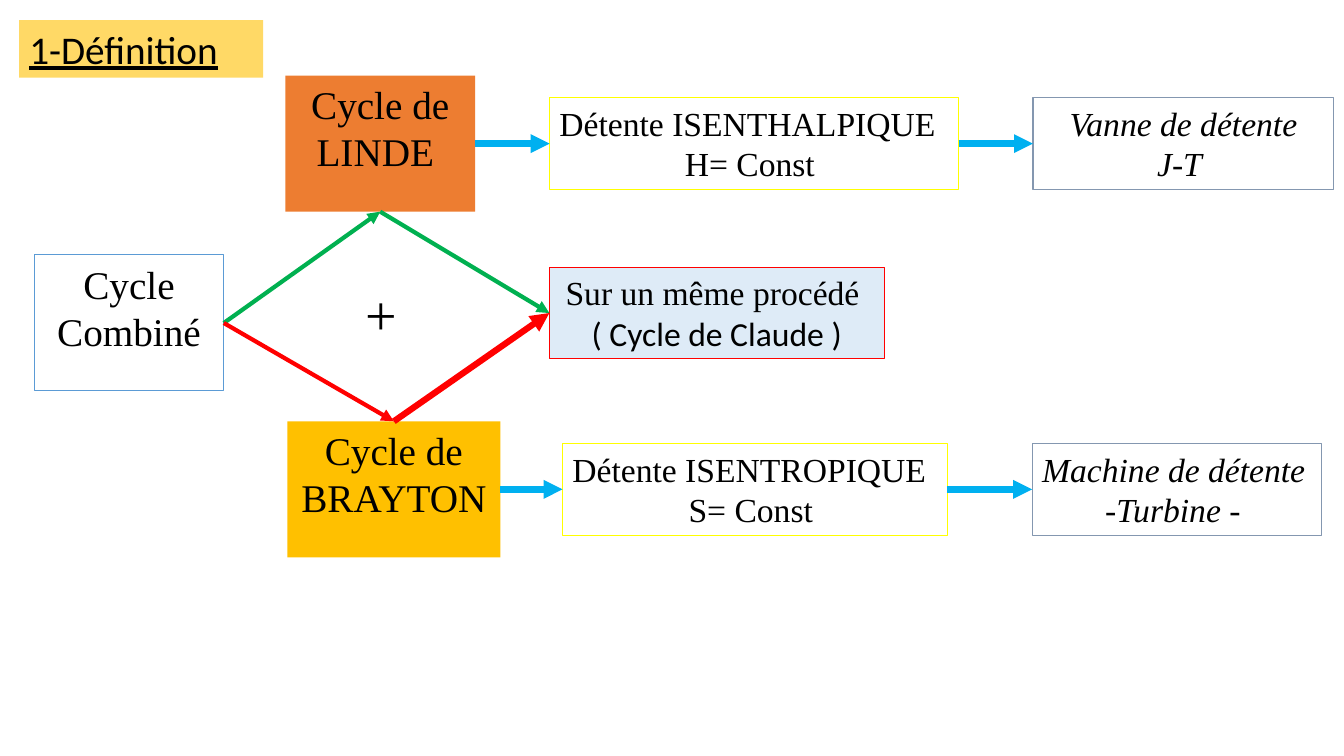
import dataclasses

import pptx
import pptx.dml.color
import pptx.enum.shapes
import pptx.enum.text
import pptx.oxml
import pptx.oxml.ns
import pptx.util

ALIGN = pptx.enum.text.PP_ALIGN
ANCHOR = pptx.enum.text.MSO_ANCHOR
TOP, LEFT, BOTTOM, RIGHT = range(4)


@dataclasses.dataclass(frozen=True)
class Theme:
    """Colours, fonts and type sizes of the slide."""
    ink: str = "000000"
    head: str = "FFD966"
    linde: str = "ED7D31"
    brayton: str = "FFC000"
    claude: str = "DEEBF7"
    blue: str = "5B9BD5"
    yellow: str = "FFFF00"
    slate: str = "8497B0"
    red: str = "FF0000"
    green: str = "00B050"
    sky: str = "00B0F0"
    serif: str = "Times New Roman"
    sans: str = "Calibri"
    body: int = 24
    large: int = 28
    sign: int = 40
    edge: float = 0.75
    thin: float = 3
    thick: float = 4.5


@dataclasses.dataclass(frozen=True)
class Box:
    """A rectangle in inches."""
    x: float
    y: float
    w: float
    h: float

    def cut(self, x, y, w, h):
        """Return a box inside this one, given in percent of its size."""
        return Box(self.x + self.w * x / 100, self.y + self.h * y / 100,
                   self.w * w / 100, self.h * h / 100)

    def emu(self):
        """Return left, top, width and height as lengths."""
        return [pptx.util.Inches(n) for n in (self.x, self.y, self.w, self.h)]


THEME = Theme()
PAGE = Box(0, 0, 13.33, 7.5)


def rgb(code):
    """Turn a hex code into a colour."""
    return pptx.dml.color.RGBColor.from_string(code)


def write(shape, text, size=THEME.body, font=THEME.serif, align=ALIGN.CENTER,
          italic=False, underline=False):
    """Add one formatted paragraph to a shape."""
    frame = shape.text_frame
    frame.word_wrap = True
    frame.auto_size = pptx.enum.text.MSO_AUTO_SIZE.NONE
    frame.vertical_anchor = ANCHOR.TOP
    para = frame.add_paragraph() if frame.text else frame.paragraphs[0]
    para.alignment = align
    para.line_spacing = 1.0
    run = para.add_run()
    run.text = text
    run.font.size = pptx.util.Pt(size)
    run.font.name = font
    run.font.italic = italic
    run.font.underline = underline
    run.font.color.rgb = rgb(THEME.ink)


def panel(slide, box, fill=None, line=None):
    """Draw a rectangle with an optional fill and outline."""
    kind = pptx.enum.shapes.MSO_SHAPE.RECTANGLE
    shape = slide.shapes.add_shape(kind, *box.emu())
    shape.shadow.inherit = False
    if fill:
        shape.fill.solid()
        shape.fill.fore_color.rgb = rgb(fill)
    else:
        shape.fill.background()
    if line:
        shape.line.color.rgb = rgb(line)
        shape.line.width = pptx.util.Pt(THEME.edge)
    else:
        shape.line.fill.background()
    return shape


def arrow(slide, start, out, end, into, color, width):
    """Join the sides of two shapes with an arrow."""
    kind = pptx.enum.shapes.MSO_CONNECTOR.STRAIGHT
    link = slide.shapes.add_connector(kind, 0, 0, 0, 0)
    link.begin_connect(start, out)
    link.end_connect(end, into)
    link.line.color.rgb = rgb(color)
    link.line.width = pptx.util.Pt(width)
    props = link.element.spPr
    space = pptx.oxml.ns.nsdecls("a")
    tip = pptx.oxml.parse_xml(f'<a:tailEnd {space} type="triangle"/>')
    props.find(pptx.oxml.ns.qn("a:ln")).append(tip)
    props.append(pptx.oxml.parse_xml(f'<a:effectLst {space}/>'))


def heading(slide, box):
    """Place the title on its coloured band."""
    title = slide.shapes.title
    title.left, title.top, title.width, title.height = box.emu()
    title.fill.solid()
    title.fill.fore_color.rgb = rgb(THEME.head)
    write(title, "1-Définition", size=THEME.large, font=THEME.sans,
          align=ALIGN.LEFT, underline=True)


def chain(slide, box, spans, fill, cycle, stage, tool, side):
    """Place a cycle, its expansion and its device in a row, and return the cycle."""
    first, gap, mid, space, last = spans
    root = panel(slide, box.cut(0, 0, first, 100), fill=fill)
    write(root, cycle, size=THEME.large)
    left = first + gap
    step = panel(slide, box.cut(left, 16.3, mid, 67.4), line=THEME.yellow)
    write(step, stage[0], align=ALIGN.LEFT)
    write(step, stage[1])
    left += mid + space
    device = panel(slide, box.cut(left, 16.3, last, 67.4), line=THEME.slate)
    write(device, tool[0], align=side, italic=True)
    write(device, tool[1], italic=True)
    for start, end in ((root, step), (step, device)):
        arrow(slide, start, RIGHT, end, LEFT, THEME.sky, THEME.thick)
    return root


def centre(slide, box, linde, brayton):
    """Place the combined cycle, the plus sign and the result, joined to both cycles."""
    source = panel(slide, box.cut(0, 0, 22.3, 81.8), line=THEME.blue)
    write(source, "Cycle Combiné", size=THEME.large)
    plus = slide.shapes.add_textbox(*box.cut(26.9, 11.5, 27.8, 87.9).emu())
    write(plus, "+", size=THEME.sign)
    result = panel(slide, box.cut(60.6, 7.3, 39.4, 55.2),
                   fill=THEME.claude, line=THEME.red)
    write(result, "Sur un même procédé ")
    write(result, "( Cycle de Claude )", font=THEME.sans)
    arrow(slide, source, RIGHT, linde, BOTTOM, THEME.green, THEME.thin)
    arrow(slide, source, RIGHT, brayton, TOP, THEME.red, THEME.thin)
    arrow(slide, brayton, TOP, result, LEFT, THEME.red, THEME.thick)
    arrow(slide, linde, BOTTOM, result, LEFT, THEME.green, THEME.thin)


def main():
    """Build and save the slide."""
    deck = pptx.Presentation()
    deck.slide_width, deck.slide_height = PAGE.emu()[2:]
    slide = deck.slides.add_slide(deck.slide_layouts.get_by_name("Title Only"))
    heading(slide, PAGE.cut(1.43, 2.67, 18.15, 7.6))
    linde = chain(slide, PAGE.cut(21.23, 10, 78.02, 18),
                  (18.1, 7.1, 39, 7.1, 28.7), THEME.linde, "Cycle de LINDE ",
                  ("Détente ISENTHALPIQUE", "H= Const "),
                  ("Vanne de détente", "J-T "), ALIGN.CENTER)
    brayton = chain(slide, PAGE.cut(21.38, 55.73, 76.97, 18),
                    (20.6, 6, 37.2, 8.2, 28), THEME.brayton, "Cycle de BRAYTON",
                    ("Détente ISENTROPIQUE", "S= Const "),
                    ("Machine de détente", "-Turbine - "), ALIGN.LEFT)
    centre(slide, PAGE.cut(2.55, 33.73, 63.24, 22), linde, brayton)
    deck.save("out.pptx")


if __name__ == "__main__":
    main()
